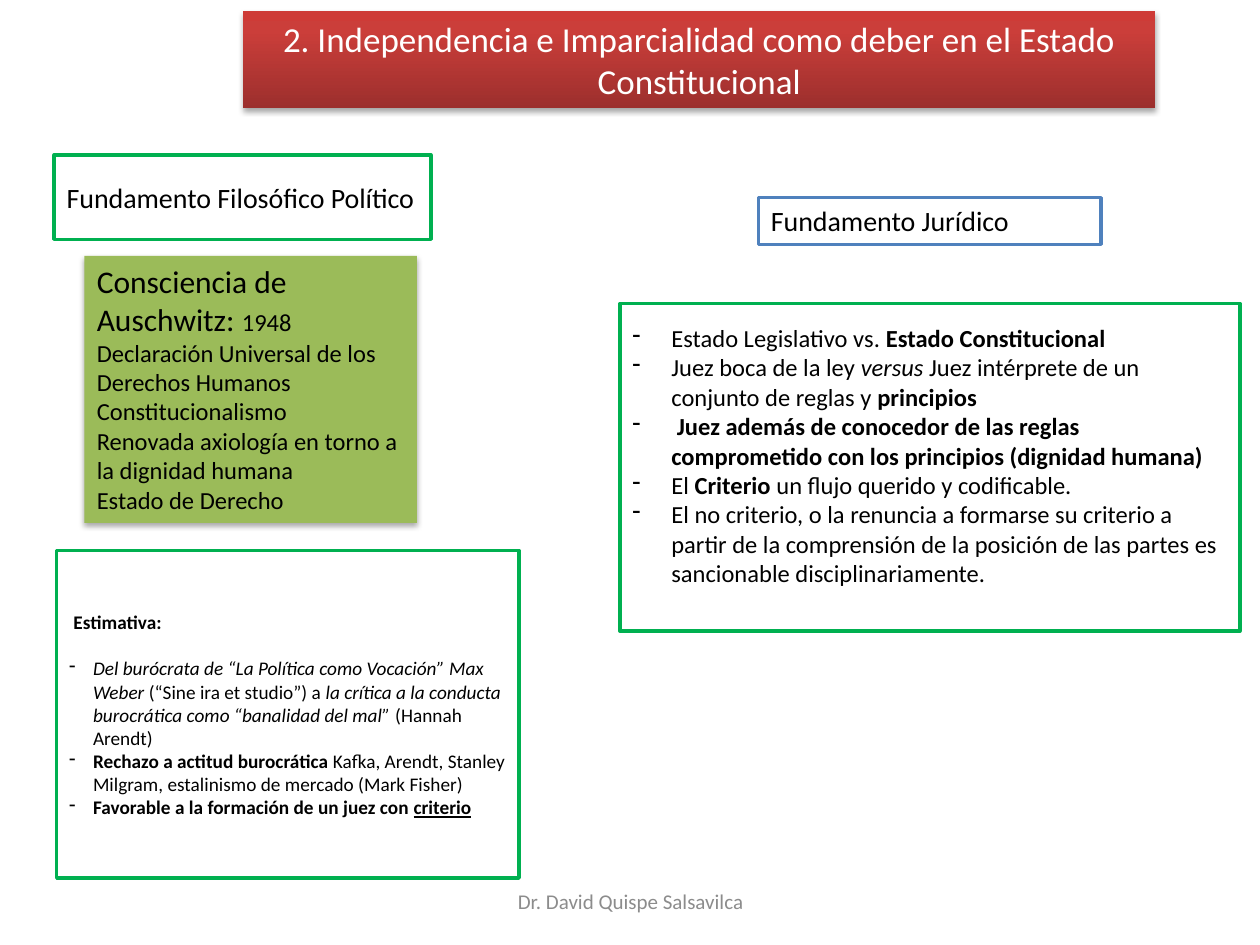
from copy import deepcopy

from lxml import etree
from pptx import Presentation
from pptx import util as u
from pptx.dml import color
from pptx.enum import shapes, text
from pptx.oxml import ns

FONT = "Calibri"
BLACK, WHITE, GREEN, BLUE = "000000", "FFFFFF", "00B050", "4F81BD"
MIDDLE = text.MSO_ANCHOR.MIDDLE
CENTER = text.PP_ALIGN.CENTER


def rgb(code):
    return color.RGBColor.from_string(code)


def part(box, left, top, width, height):
    x, y, w, h = box
    return (int(x + w * left / 100), int(y + h * top / 100),
            int(w * width / 100), int(h * height / 100))


def panel(slide, box, fill=WHITE, line=None):
    rect = slide.shapes.add_shape(shapes.MSO_SHAPE.RECTANGLE, *box)
    rect.shadow.inherit = False
    rect.fill.solid()
    rect.fill.fore_color.rgb = rgb(fill)
    if line:
        rect.line.color.rgb = rgb(line)
        rect.line.width = u.Pt(2)
    else:
        rect.line.fill.background()
    return rect


def cast_shadow(rect):
    effects = rect._element.spPr.find(ns.qn("a:effectLst"))
    shadow = etree.SubElement(effects, ns.qn("a:outerShdw"), blurRad="40000",
                              dist="23000", dir="5400000", rotWithShape="0")
    tint = etree.SubElement(shadow, ns.qn("a:srgbClr"), val=BLACK)
    etree.SubElement(tint, ns.qn("a:alpha"), val="35000")


def shade(rect, stops):
    rect.fill.gradient()
    rect.fill.gradient_angle = 90
    stop_list = rect._element.spPr.find(".//" + ns.qn("a:gsLst"))
    stop_list.append(deepcopy(stop_list[-1]))
    for stop, (position, code) in zip(rect.fill.gradient_stops, stops):
        stop.position = position
        stop.color.rgb = rgb(code)


def write(holder, paragraphs, size, ink=BLACK, align=text.PP_ALIGN.LEFT,
          anchor=text.MSO_ANCHOR.TOP):
    frame = holder.text_frame
    frame.word_wrap = True
    frame.vertical_anchor = anchor
    for index, pieces in enumerate(paragraphs):
        paragraph = frame.paragraphs[0] if index == 0 else frame.add_paragraph()
        paragraph.alignment = align
        for wording, style in pieces:
            run = paragraph.add_run()
            run.text = wording
            run.font.name = FONT
            run.font.size = u.Pt(18 if "L" in style else size)
            run.font.color.rgb = rgb(ink)
            run.font.bold = "b" in style
            run.font.italic = "i" in style
            run.font.underline = "u" in style
    return frame


def dash(paragraphs, indent):
    for paragraph in paragraphs:
        props = paragraph._p.get_or_add_pPr()
        props.set("marL", str(u.Inches(indent)))
        props.set("indent", str(-u.Inches(indent)))
        etree.SubElement(props, ns.qn("a:buChar"), char="-")


def title_banner(slide, box):
    banner = panel(slide, box)
    shade(banner, [(0, "9C2F2D"), (0.8, "CB3E3A"), (1, "CE3B37")])
    cast_shadow(banner)
    write(banner, [[("2. Independencia e Imparcialidad como deber en el Estado "
                     "Constitucional", "")]], 20, WHITE, CENTER)


def philosophical_column(slide, box):
    heading = panel(slide, part(box, 0, 0, 81.03, 11.67), line=GREEN)
    write(heading, [[("Fundamento Filosófico Político", "")]], 16, anchor=MIDDLE)

    conscience = panel(slide, part(box, 6.5, 13.94, 71.54, 36.93), "9BBB59")
    cast_shadow(conscience)
    write(conscience, [
        [("Consciencia de Auschwitz: ", "L"),
         ("1948 Declaración Universal de los Derechos Humanos", "")],
        [("Constitucionalismo", "")],
        [("Renovada axiología en torno a la dignidad humana", "")],
        [("Estado de Derecho", "")],
    ], 14)

    estimate = panel(slide, part(box, 0.54, 54.7, 99.46, 45.3), line=GREEN)
    frame = write(estimate, [
        [(" ", ""), ("Estimativa:", "b")],
        [("Del burócrata de “La Política como Vocación” Max Weber", "i"),
         (" (“Sine ira et studio”) a ", ""),
         ("la crítica a la conducta burocrática como “banalidad del mal”", "i"),
         (" (Hannah Arendt)", "")],
        [("Rechazo a actitud burocrática ", "b"),
         ("Kafka, Arendt, Stanley Milgram, estalinismo de mercado (Mark Fisher)", "")],
        [("Favorable a la formación de un juez con ", "b"), ("criterio", "bu")],
    ], 11, anchor=MIDDLE)
    frame.paragraphs[0].space_after = u.Pt(13.4)
    dash(frame.paragraphs[1:], 0.19)


def legal_column(slide, box):
    detail = panel(slide, part(box, 0, 24.42, 100, 75.58), line=GREEN)
    frame = write(detail, [
        [("Estado Legislativo vs. ", ""), ("Estado Constitucional", "b")],
        [("Juez boca de la ley ", ""), ("versus", "i"),
         (" Juez intérprete de un conjunto de reglas y ", ""), ("principios", "b")],
        [(" Juez además de conocedor de las reglas comprometido con los "
          "principios (dignidad humana)", "b")],
        [("El ", ""), ("Criterio", "b"), (" un flujo querido y codificable.", "")],
        [("El no criterio, o la renuncia a formarse su criterio a partir de la "
          "comprensión de la posición de las partes es sancionable "
          "disciplinariamente.", "")],
    ], 14, anchor=MIDDLE)
    frame.margin_bottom = u.Inches(0.24)
    dash(frame.paragraphs, 0.31)

    heading = panel(slide, part(box, 22.36, 0, 55.28, 10.76), line=BLUE)
    write(heading, [[("Fundamento Jurídico", "")]], 16)


def footer(slide, box):
    author = slide.shapes.add_textbox(*box)
    write(author, [[("Dr. David Quispe Salsavilca", "")]], 12, "8C8C8C",
          CENTER, MIDDLE)


def main():
    deck = Presentation()
    deck.slide_width, deck.slide_height = u.Inches(10), u.Inches(7.5)
    slide = deck.slides.add_slide(deck.slide_layouts[6])
    page = (0, 0, deck.slide_width, deck.slide_height)
    title_banner(slide, part(page, 19.3, 1.2, 72.4, 10.27))
    philosophical_column(slide, part(page, 4.3, 16.4, 36.9, 76.53))
    legal_column(slide, part(page, 49.2, 20.93, 49.2, 45.87))
    footer(slide, part(page, 34.2, 92.67, 31.7, 5.33))
    deck.save("out.pptx")


if __name__ == "__main__":
    main()
